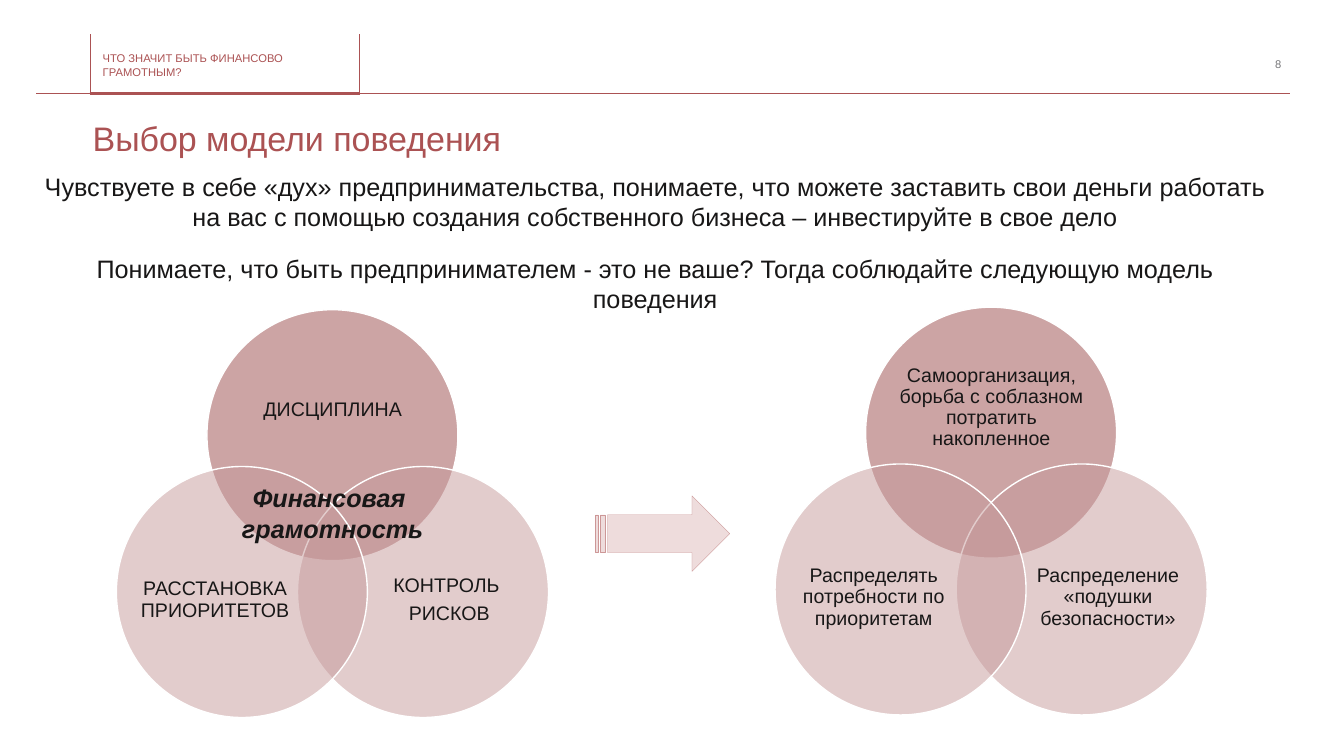
from dataclasses import dataclass

from lxml.etree import SubElement
from pptx import Presentation
from pptx.dml.color import RGBColor
from pptx.enum.shapes import MSO_CONNECTOR, MSO_SHAPE
from pptx.enum.text import MSO_ANCHOR as Anchor, MSO_AUTO_SIZE, PP_ALIGN as Align
from pptx.oxml.ns import qn
from pptx.util import Pt

RED = RGBColor(0xAB, 0x52, 0x53)
DEEP_RED = RGBColor(0x9B, 0x4A, 0x4B)
ROSE = RGBColor(0xC6, 0x9A, 0x9B)
PALE_ROSE = RGBColor(0xEE, 0xDC, 0xDC)
ARROW_EDGE = RGBColor(0xCD, 0x97, 0x97)
INK = RGBColor(0x18, 0x17, 0x17)
GREY = RGBColor(0x77, 0x77, 0x7A)
WHITE = RGBColor(0xFF, 0xFF, 0xFF)
FONT = "Arial"
DIAMETER = 179.3


@dataclass(frozen=True)
class Box:
    left: float
    top: float
    width: float
    height: float

    def shifted(self, x: float, y: float) -> "Box":
        return Box(self.left + x, self.top + y, self.width, self.height)

    def lengths(self) -> tuple:
        return Pt(self.left), Pt(self.top), Pt(self.width), Pt(self.height)


@dataclass(frozen=True)
class Petal:
    circle: Box
    label: Box
    color: RGBColor


@dataclass(frozen=True)
class Venn:
    left: float
    top: float
    labels: tuple


@dataclass(frozen=True)
class Rule:
    x1: float
    y1: float
    x2: float
    y2: float
    weight: float = 0.25


PETALS = (
    Petal(Box(0, 0, DIAMETER, DIAMETER), Box(24, 31.5, 131.8, 80.6), DEEP_RED),
    Petal(Box(64.7, 112, DIAMETER, DIAMETER), Box(119.5, 158.2, 107.3, 98.6), ROSE),
    Petal(Box(-64.7, 112, DIAMETER, DIAMETER), Box(-47.8, 158.2, 107.3, 98.6), ROSE),
)
VENNS = (
    Venn(147.8, 221.2, ("ДИСЦИПЛИНА", "КОНТРОЛЬ \nРИСКОВ", "РАССТАНОВКА ПРИОРИТЕТОВ")),
    Venn(618.3, 219.4, (
        "Самоорганизация, борьба с соблазном потратить накопленное",
        "Распределение «подушки безопасности»",
        "Распределять потребности по приоритетам",
    )),
)
RULES = (
    Rule(25.9, 66.5, 64.1, 66.5),
    Rule(64.1, 67, 257, 67, 2.25),
    Rule(255.6, 66.5, 921.6, 66.5),
    Rule(64.1, 67, 64.1, 24.5),
    Rule(256.6, 67, 256.6, 24.5),
)
ADVICE = (
    (118.8, "Чувствуете в себе «дух» предпринимательства, понимаете, что можете заставить "
            "свои деньги работать на вас с помощью создания собственного бизнеса – "
            "инвестируйте в свое дело"),
    (177.1, "Понимаете, что быть предпринимателем - это не ваше? "
            "Тогда соблюдайте следующую модель поведения"),
)


def write(shape, text: str, *, size: float, color: RGBColor = INK, align=Align.LEFT,
          anchor=Anchor.MIDDLE, inset: tuple = (0, 0), spacing: float = 1,
          after: float = 0, bold: bool = False, italic: bool = False,
          wrap: bool = True) -> None:
    frame = shape.text_frame
    frame.text = text
    frame.auto_size = MSO_AUTO_SIZE.NONE
    frame.word_wrap = wrap
    frame.vertical_anchor = anchor
    frame.margin_left = frame.margin_right = Pt(inset[0])
    frame.margin_top = frame.margin_bottom = Pt(inset[1])
    for paragraph in frame.paragraphs:
        paragraph.alignment = align
        paragraph.line_spacing = spacing
        paragraph.space_after = Pt(after)
        font = paragraph.font
        font.name, font.size, font.color.rgb = FONT, Pt(size), color
        font.bold, font.italic = bold, italic


def add_text(slide, box: Box, text: str, **style) -> None:
    write(slide.shapes.add_textbox(*box.lengths()), text, **style)


def add_filled(slide, kind, box: Box, fill: RGBColor, edge: RGBColor, weight: float):
    shape = slide.shapes.add_shape(kind, *box.lengths())
    shape.shadow.inherit = False
    shape.fill.solid()
    shape.fill.fore_color.rgb = fill
    shape.line.color.rgb = edge
    shape.line.width = Pt(weight)
    return shape


def add_rule(slide, rule: Rule) -> None:
    line = slide.shapes.add_connector(
        MSO_CONNECTOR.STRAIGHT, Pt(rule.x1), Pt(rule.y1), Pt(rule.x2), Pt(rule.y2))
    line.line.color.rgb = RED
    line.line.width = Pt(rule.weight)
    SubElement(line._element.spPr, qn("a:effectLst"))


def add_venn(slide, venn: Venn) -> None:
    for petal, label in zip(PETALS, venn.labels):
        circle = add_filled(slide, MSO_SHAPE.OVAL, petal.circle.shifted(venn.left, venn.top),
                            petal.color, WHITE, 1)
        tint = circle._element.spPr.find(qn("a:solidFill"))[0]
        SubElement(tint, qn("a:alpha")).set("val", "50000")
        add_text(slide, petal.label.shifted(venn.left, venn.top), label,
                 size=14, align=Align.CENTER, spacing=0.9, after=4.9)


def main() -> None:
    deck = Presentation()
    deck.slide_width, deck.slide_height = Pt(960), Pt(540)
    slide = deck.slides.add_slide(deck.slide_layouts[5])

    for rule in RULES:
        add_rule(slide, rule)
    add_text(slide, Box(73.4, 36.7, 179.3, 19.4), "ЧТО ЗНАЧИТ БЫТЬ ФИНАНСОВО ГРАМОТНЫМ?",
             size=8, color=RED)
    add_text(slide, Box(884.2, 27.4, 38.2, 36.7), "8", size=8, color=GREY, align=Align.RIGHT,
             inset=(7.2, 3.6))

    heading = slide.shapes.title
    heading.left, heading.top, heading.width, heading.height = Box(66.2, 82, 855.4, 36).lengths()
    write(heading, "Выбор модели поведения", size=24.3, color=RED, spacing=0.9)

    for venn in VENNS:
        add_venn(slide, venn)
    add_text(slide, Box(164.9, 341.3, 145.4, 51.1), "Финансовая \nграмотность", size=18,
             align=Align.CENTER, anchor=Anchor.TOP, inset=(7.2, 3.6),
             bold=True, italic=True, wrap=False)
    add_filled(slide, MSO_SHAPE.STRIPED_RIGHT_ARROW, Box(425.5, 354.2, 95.8, 54),
               PALE_ROSE, ARROW_EDGE, 0.25)
    for top, advice in ADVICE:
        add_text(slide, Box(21.6, top, 892.8, 51.1), advice, size=18, align=Align.CENTER,
                 anchor=Anchor.TOP, inset=(7.2, 3.6))

    deck.save("out.pptx")


if __name__ == "__main__":
    main()
